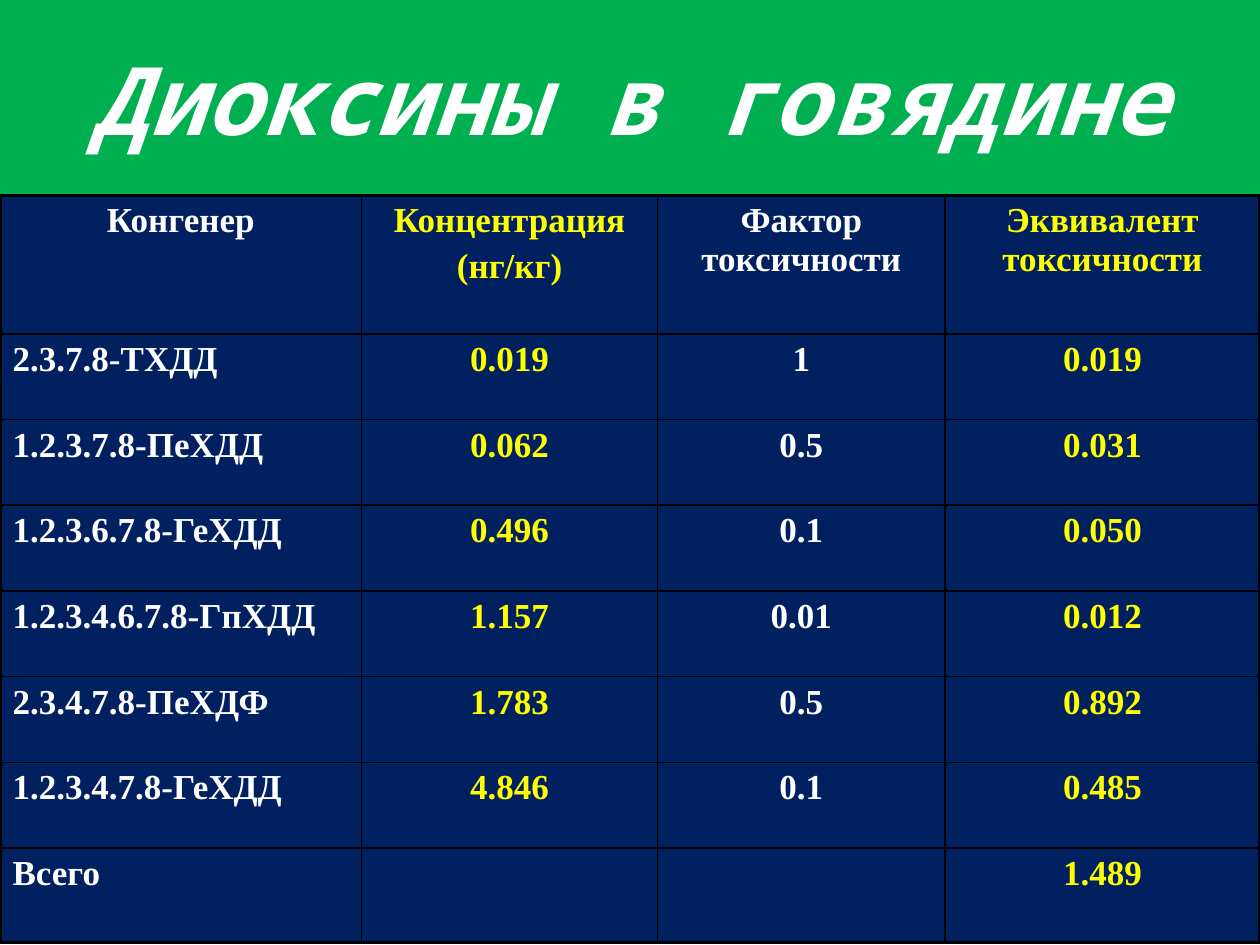
from dataclasses import dataclass

from lxml import etree
from pptx import Presentation
from pptx import util as u
from pptx.dml.color import RGBColor
from pptx.enum import shapes, text
from pptx.oxml.ns import qn


@dataclass(frozen=True)
class Theme:
    green: str = "00B050"
    navy: str = "002060"
    white: str = "FFFFFF"
    yellow: str = "FFFF00"
    black: str = "000000"
    title_font: str = "Noto Sans Mono"
    table_font: str = "Times New Roman"
    title_size: int = 54
    table_size: int = 20
    paragraph_gap: int = 4
    outer_line: float = 2.25
    inner_line: float = 1


theme = Theme()


def add_run(para, words, font, size, color, italic=False):
    span = para.add_run()
    span.text = words
    span.font.name = font
    span.font.size = u.Pt(size)
    span.font.bold = True
    span.font.italic = italic
    span.font.color.rgb = RGBColor.from_string(color)


def set_borders(cell, widths):
    properties = cell._tc.get_or_add_tcPr()
    for position, (side, width) in enumerate(widths.items()):
        line = etree.Element(qn(f"a:ln{side}"), w=str(u.Pt(width)))
        fill = etree.SubElement(line, qn("a:solidFill"))
        etree.SubElement(fill, qn("a:srgbClr"), val=theme.black)
        properties.insert(position, line)


deck = Presentation()
deck.slide_width = u.Inches(10)
deck.slide_height = u.Inches(7.5)
page = deck.slides.add_slide(deck.slide_layouts[6])

title = page.shapes.add_shape(
    shapes.MSO_SHAPE.RECTANGLE, 0, 0, u.Inches(10), u.Inches(1.55)
)
title.shadow.inherit = False
title.fill.solid()
title.fill.fore_color.rgb = RGBColor.from_string(theme.green)
title.line.fill.background()
title.text_frame.word_wrap = True
title.text_frame.vertical_anchor = text.MSO_ANCHOR.MIDDLE
para = title.text_frame.paragraphs[0]
para.alignment = text.PP_ALIGN.CENTER
add_run(para, "Диоксины в говядине", theme.title_font, theme.title_size,
        theme.white, italic=True)

rows = [
    ("Конгенер", "Концентрация\n(нг/кг)", "Фактор токсичности", "Эквивалент токсичности"),
    ("2.3.7.8-ТХДД", "0.019", "1", "0.019"),
    ("1.2.3.7.8-ПеХДД", "0.062", "0.5", "0.031"),
    ("1.2.3.6.7.8-ГеХДД", "0.496", "0.1", "0.050"),
    ("1.2.3.4.6.7.8-ГпХДД", "1.157", "0.01", "0.012"),
    ("2.3.4.7.8-ПеХДФ", "1.783", "0.5", "0.892"),
    ("1.2.3.4.7.8-ГеХДД", "4.846", "0.1", "0.485"),
    ("Всего", "", "", "1.489"),
]
column_widths = [2.87, 2.35, 2.28, 2.5]
row_heights = [1.1] + [0.68] * 6 + [0.75]
column_colors = [theme.white, theme.yellow] * 2
last_row = len(rows) - 1
last_column = len(column_widths) - 1

table = page.shapes.add_table(
    len(rows), len(column_widths), 0, u.Inches(1.55), u.Inches(10), u.Inches(5.95)
).table
for column, width in zip(table.columns, column_widths):
    column.width = u.Inches(width)
for row, height in zip(table.rows, row_heights):
    row.height = u.Inches(height)

for r, values in enumerate(rows):
    for c, value in enumerate(values):
        cell = table.cell(r, c)
        cell.fill.solid()
        cell.fill.fore_color.rgb = RGBColor.from_string(theme.navy)
        edges = {"L": c == 0, "R": c == last_column, "T": r == 0, "B": r == last_row}
        set_borders(cell, {
            side: theme.outer_line if outer else theme.inner_line
            for side, outer in edges.items()
        })
        if not value:
            continue
        for i, words in enumerate(value.split("\n")):
            frame = cell.text_frame
            para = frame.add_paragraph() if i else frame.paragraphs[0]
            para.space_before = u.Pt(theme.paragraph_gap)
            left = c == 0 and r > 0
            para.alignment = text.PP_ALIGN.LEFT if left else text.PP_ALIGN.CENTER
            add_run(para, words, theme.table_font, theme.table_size, column_colors[c])

deck.save("out.pptx")
